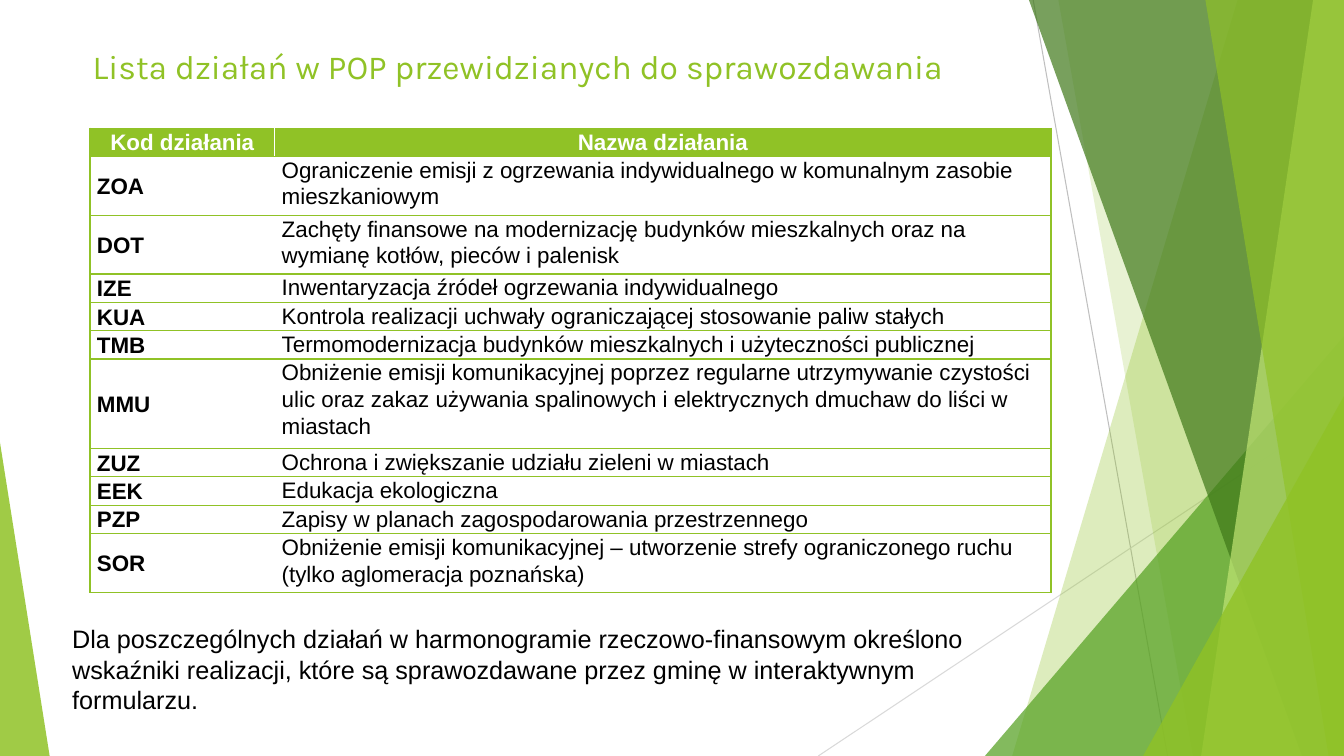
import pptx
import pptx.util
import pptx.dml.color
import pptx.enum.shapes
import pptx.enum.text
import pptx.oxml
import pptx.oxml.ns
from pptx.util import Pt

RGBColor = pptx.dml.color.RGBColor
LIME = RGBColor(0x90, 0xC2, 0x26)
GREEN = RGBColor(0x54, 0xA0, 0x21)
FOREST = RGBColor(0x3F, 0x78, 0x19)
PALE_LIME = RGBColor(0xC0, 0xE4, 0x74)
GREY = RGBColor(0xBF, 0xBF, 0xBF)
LIGHT_GREY = RGBColor(0xD9, 0xD9, 0xD9)
WHITE = RGBColor(0xFF, 0xFF, 0xFF)
BLACK = RGBColor(0, 0, 0)
WIDTH, HEIGHT = 960, 540


def paint(facet, color, opacity):
    facet.shadow.inherit = False
    facet.line.fill.background()
    facet.fill.solid()
    facet.fill.fore_color.rgb = color
    tint = facet._element.spPr.find(pptx.oxml.ns.qn("a:solidFill"))[0]
    pptx.oxml.ns.qn("a:alpha")
    alpha = tint.makeelement(pptx.oxml.ns.qn("a:alpha"), {"val": str(opacity * 1000)})
    tint.append(alpha)


def add_border(cell, side, color):
    cell._tc.get_or_add_tcPr().append(pptx.oxml.parse_xml(
        f'<a:{side} {pptx.oxml.ns.nsdecls("a")} w="12700"><a:solidFill>'
        f'<a:srgbClr val="{color}"/></a:solidFill></a:{side}>'))


presentation = pptx.Presentation()
presentation.slide_width = Pt(WIDTH)
presentation.slide_height = Pt(HEIGHT)
slide = presentation.slides.add_slide(presentation.slide_layouts[5])
shapes = slide.shapes

for x1, y1, x2, y2, color in [
    (738, 0, 834, HEIGHT, GREY),
    (WIDTH, 290, 584.5, HEIGHT, LIGHT_GREY),
]:
    ray = shapes.add_connector(
        pptx.enum.shapes.MSO_CONNECTOR.STRAIGHT, Pt(x1), Pt(y1), Pt(x2), Pt(y2))
    ray.line.color.rgb = color
    ray.line.width = Pt(0.75)
    ray._element.spPr.append(
        pptx.oxml.parse_xml(f'<a:effectLst {pptx.oxml.ns.nsdecls("a")}/>'))

facets = [
    ("band", 884, 723, LIME, 30),
    ("band", 756, 852, LIME, 20),
    ("triangle", 703.5, 240, GREEN, 72),
    ("band", 735, 930, FOREST, 70),
    ("band", 938, 858, PALE_LIME, 70),
    ("band", 861, 949, LIME, 65),
    ("triangle", 816.5, 283, LIME, 80),
]
for kind, first, second, color, opacity in facets:
    if kind == "band":
        outline = shapes.build_freeform(Pt(first), 0)
        outline.add_line_segments(
            [(Pt(WIDTH), 0), (Pt(WIDTH), Pt(HEIGHT)), (Pt(second), Pt(HEIGHT))])
        facet = outline.convert_to_shape()
    else:
        facet = shapes.add_shape(
            pptx.enum.shapes.MSO_SHAPE.ISOSCELES_TRIANGLE,
            Pt(first), Pt(second), Pt(WIDTH - first), Pt(HEIGHT - second))
        facet.adjustments[0] = 1
    paint(facet, color, opacity)

left_wedge = shapes.add_shape(
    pptx.enum.shapes.MSO_SHAPE.ISOSCELES_TRIANGLE, 0, Pt(316), Pt(35.5), Pt(224))
left_wedge.adjustments[0] = 0
paint(left_wedge, LIME, 85)

title = shapes.title
title.left, title.top, title.width, title.height = Pt(59), Pt(29.5), Pt(677), Pt(57.5)
title.text_frame.text = "Lista działań w POP przewidzianych do sprawozdawania"
title.text_frame.vertical_anchor = pptx.enum.text.MSO_ANCHOR.TOP
heading = title.text_frame.paragraphs[0]
heading.alignment = pptx.enum.text.PP_ALIGN.LEFT
heading.font.size = Pt(24)
heading.font.name = "Karla"
heading.font.color.rgb = LIME

actions = [
    ("Kod działania", "Nazwa działania", 20.25),
    ("ZOA", "Ograniczenie emisji z ogrzewania indywidualnego w komunalnym zasobie mieszkaniowym", 42),
    ("DOT", "Zachęty finansowe na modernizację budynków mieszkalnych oraz na wymianę kotłów, pieców i palenisk", 42),
    ("IZE", "Inwentaryzacja źródeł ogrzewania indywidualnego", 20.25),
    ("KUA", "Kontrola realizacji uchwały ograniczającej stosowanie paliw stałych", 20.25),
    ("TMB", "Termomodernizacja budynków mieszkalnych i użyteczności publicznej", 20.25),
    ("MMU", "Obniżenie emisji komunikacyjnej poprzez regularne utrzymywanie czystości ulic oraz zakaz używania spalinowych i elektrycznych dmuchaw do liści w miastach", 64),
    ("ZUZ", "Ochrona i zwiększanie udziału zieleni w miastach", 20.25),
    ("EEK", "Edukacja ekologiczna", 20.25),
    ("PZP", "Zapisy w planach zagospodarowania przestrzennego", 20.25),
    ("SOR", "Obniżenie emisji komunikacyjnej – utworzenie strefy ograniczonego ruchu (tylko aglomeracja poznańska)", 42),
]
action_table = shapes.add_table(
    len(actions), 2, Pt(64.25), Pt(91.5), Pt(686.5), Pt(332)).table
action_table.horz_banding = False
action_table.columns[0].width = Pt(132)
action_table.columns[1].width = Pt(554.5)
for row, (code, name, height) in enumerate(actions):
    action_table.rows[row].height = Pt(height)
    for column, text in enumerate((code, name)):
        is_header = row == 0
        cell = action_table.cell(row, column)
        cell.text = text
        cell.margin_left = cell.margin_right = Pt(5)
        cell.margin_top = cell.margin_bottom = 0
        if is_header or column == 0:
            cell.vertical_anchor = pptx.enum.text.MSO_ANCHOR.MIDDLE
        for side in ("lnR" if column else "lnL", "lnT", "lnB"):
            add_border(cell, side, LIME)
        if is_header:
            cell.fill.solid()
            cell.fill.fore_color.rgb = LIME
        else:
            cell.fill.background()
        label = cell.text_frame.paragraphs[0]
        label.line_spacing = 1.07
        if is_header:
            label.alignment = pptx.enum.text.PP_ALIGN.CENTER
        label.font.size = Pt(16)
        label.font.name = "Arial"
        label.font.bold = is_header or column == 0
        label.font.color.rgb = WHITE if is_header else BLACK

summary = shapes.add_textbox(Pt(44.5), Pt(442), Pt(706.5), Pt(85)).text_frame
summary.word_wrap = True
summary.text = (
    "Dla poszczególnych działań w harmonogramie rzeczowo-finansowym określono "
    "wskaźniki realizacji, które są sprawozdawane przez gminę w interaktywnym formularzu.")
summary.paragraphs[0].font.size = Pt(18)
summary.paragraphs[0].font.name = "Arial"
summary.paragraphs[0].font.color.rgb = BLACK

presentation.save("out.pptx")
